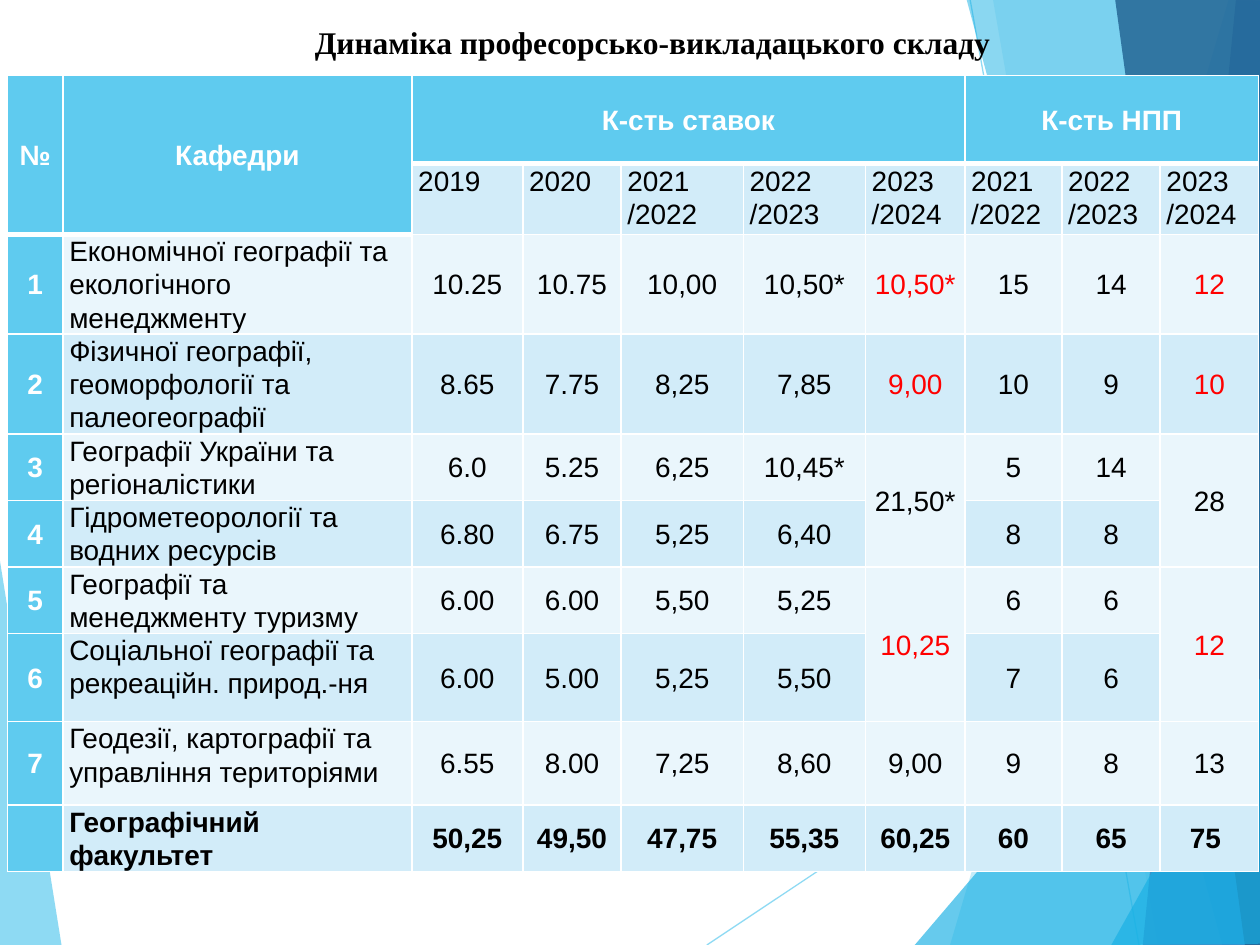
from lxml import etree
from pptx import Presentation
from pptx.dml.color import RGBColor
from pptx.enum import shapes, text
from pptx.oxml import ns
from pptx.util import Inches, Pt

COLORS = {
    "white": "FFFFFF", "black": "000000", "red": "FF0000", "sky": "5FCBEF",
    "azure": "17B0E4", "blue": "2E83C3", "navy": "226292",
    "odd": "EAF6FC", "even": "D2ECF9",
}

TITLE = "Динаміка професорсько-викладацького складу"
HEADER = ["№", "Кафедри", "К-сть ставок", "", "", "", "", "К-сть НПП", "", ""]
YEARS = ["", "", "2019", "2020", "2021\n/2022", "2022\n/2023", "2023\n/2024",
         "2021\n/2022", "2022\n/2023", "2023\n/2024"]
DEPARTMENTS = [
    ["1", "Економічної географії та екологічного менеджменту",
     "10.25", "10.75", "10,00", "10,50*", "10,50*", "15", "14", "12"],
    ["2", "Фізичної географії, геоморфології та палеогеографії",
     "8.65", "7.75", "8,25", "7,85", "9,00", "10", "9", "10"],
    ["3", "Географії України та регіоналістики",
     "6.0", "5.25", "6,25", "10,45*", "21,50*", "5", "14", "28"],
    ["4", "Гідрометеорології та водних ресурсів",
     "6.80", "6.75", "5,25", "6,40", "", "8", "8", ""],
    ["5", "Географії та менеджменту туризму",
     "6.00", "6.00", "5,50", "5,25", "10,25", "6", "6", "12"],
    ["6", "Соціальної географії та рекреаційн. природ.-ня",
     "6.00", "5.00", "5,25", "5,50", "", "7", "6", ""],
    ["7", "Геодезії, картографії та управління територіями",
     "6.55", "8.00", "7,25", "8,60", "9,00", "9", "8", "13"],
]
TOTAL = ["", "Географічний факультет",
         "50,25", "49,50", "47,75", "55,35", "60,25", "60", "65", "75 "]
ROWS = [HEADER, YEARS, *DEPARTMENTS, TOTAL]

COL_WIDTHS = [0.44, 2.77, 0.88, 0.78, 0.97, 0.97, 0.79, 0.77, 0.78, 0.78]
ROW_HEIGHTS = [0.7, 0.56, 0.7, 0.7, 0.47, 0.47, 0.47, 0.7, 0.66, 0.47]
# first row, first column, last row, last column
MERGES = [(0, 0, 1, 0), (0, 1, 1, 1), (0, 2, 0, 6), (0, 7, 0, 9),
          (4, 6, 5, 6), (4, 9, 5, 9), (6, 6, 7, 6), (6, 9, 7, 9)]
RED_CELLS = {(2, 6), (2, 9), (3, 6), (3, 9), (6, 6), (6, 9)}

LEFT_FACET = ("sky", 70, [(-0.01, 4.39), (0.49, 7.51), (-0.01, 7.5)])
RAYS = [((5.61, 7.5), (10.01, 4.57)), ((7.7, 0), (9.04, 7.5))]
RIGHT_FACETS = [
    ("sky", 36, [(9.75, 0), (7.54, 7.5), (10.02, 7.51), (10.01, 0.01)]),
    ("sky", 20, [(7.88, -0.01), (9.19, 7.5), (10.01, 7.5), (10.01, -0.01)]),
    ("azure", 66, [(7.26, 7.5), (10, 4.29), (10.01, 7.5)]),
    ("azure", 50, [(7.67, -0.01), (9.7, 7.5), (10.01, 7.49), (10.01, -0.01)]),
    ("blue", 70, [(9.81, -0.01), (9.07, 7.5), (10.01, 7.5), (10, -0.01)]),
    ("navy", 82, [(8.85, -0.01), (9.88, 7.5), (10.02, 7.5), (10, -0.01)]),
    ("azure", 66, [(8.82, 7.5), (10.02, 5.35), (10.02, 7.49)]),
]


def rgb(color):
    return RGBColor.from_string(COLORS[color])


def set_opacity(element, percent):
    for color in element.iter(ns.qn("a:srgbClr")):
        etree.SubElement(color, ns.qn("a:alpha"), val=str(percent * 1000))


def add_facet(slide, color, opacity, points):
    corners = [(Inches(x), Inches(y)) for x, y in points]
    builder = slide.shapes.build_freeform(*corners[0])
    builder.add_line_segments(corners[1:], close=True)
    facet = builder.convert_to_shape()
    facet.shadow.inherit = False
    facet.line.fill.background()
    facet.fill.solid()
    facet.fill.fore_color.rgb = rgb(color)
    set_opacity(facet._element.spPr, opacity)


def add_ray(slide, start, end):
    ray = slide.shapes.add_connector(
        shapes.MSO_CONNECTOR.STRAIGHT, *(Inches(v) for v in (*start, *end)))
    ray.line.color.rgb = rgb("sky")
    ray.line.width = Pt(0.75)
    properties = ray._element.spPr
    set_opacity(properties, 70)
    etree.SubElement(properties, ns.qn("a:effectLst"))


def write(frame, content, *, font="Arial", size=16, color="black", bold=False,
          align=text.PP_ALIGN.LEFT, spacing=None):
    frame.word_wrap = True
    frame.text = content
    for paragraph in frame.paragraphs:
        paragraph.alignment = align
        paragraph.line_spacing = spacing
        paragraph.font.size = Pt(size)
        for run in paragraph.runs:
            run.font.name = font
            run.font.size = Pt(size)
            run.font.bold = bold
            run.font.color.rgb = rgb(color)


def set_borders(cell, widths):
    """Draw white borders; widths are points for left, right, top, bottom."""
    properties = cell._tc.get_or_add_tcPr()
    for index, (side, width) in enumerate(zip("LRTB", widths)):
        border = etree.Element(ns.qn(f"a:ln{side}"), w=str(Pt(width)))
        fill = etree.SubElement(border, ns.qn("a:solidFill"))
        etree.SubElement(fill, ns.qn("a:srgbClr"), val=COLORS["white"])
        properties.insert(index, border)


def format_cell(cell, row, col, content):
    header_rows = 2 if col < 2 else 1
    is_header = row < header_rows
    is_accent = is_header or col == 0
    is_total = row == len(ROWS) - 1
    at_top_left = not is_header and (row == 1 or col == 1)

    cell.margin_left = cell.margin_right = Inches(0.05)
    cell.margin_top = cell.margin_bottom = 0
    cell.vertical_anchor = (text.MSO_ANCHOR.TOP if at_top_left
                            else text.MSO_ANCHOR.MIDDLE)
    cell.fill.solid()
    cell.fill.fore_color.rgb = rgb(
        "sky" if is_accent else "even" if row % 2 else "odd")
    if is_total and not is_accent:
        cell.fill.fore_color.rgb = rgb("even")
    set_borders(cell, (1, 1, 3 if row == header_rows else 1,
                       3 if is_header else 1))
    write(cell.text_frame, content,
          color=("white" if is_accent
                 else "red" if (row, col) in RED_CELLS else "black"),
          bold=is_accent or is_total, spacing=1.07,
          align=text.PP_ALIGN.LEFT if at_top_left else text.PP_ALIGN.CENTER)


def add_staff_table(slide):
    staff = slide.shapes.add_table(
        len(ROWS), len(COL_WIDTHS), Inches(0.06), Inches(0.6),
        Inches(sum(COL_WIDTHS)), Inches(sum(ROW_HEIGHTS))).table
    for column, width in zip(staff.columns, COL_WIDTHS):
        column.width = Inches(width)
    for row, height in zip(staff.rows, ROW_HEIGHTS):
        row.height = Inches(height)
    for row, contents in enumerate(ROWS):
        for col, content in enumerate(contents):
            format_cell(staff.cell(row, col), row, col, content)
    for top, left, bottom, right in MERGES:
        staff.cell(top, left).merge(staff.cell(bottom, right))


def main():
    deck = Presentation()
    deck.slide_width, deck.slide_height = Inches(10), Inches(7.5)
    slide = deck.slides.add_slide(deck.slide_layouts[6])

    add_facet(slide, *LEFT_FACET)
    for start, end in RAYS:
        add_ray(slide, start, end)
    for facet in RIGHT_FACETS:
        add_facet(slide, *facet)

    add_staff_table(slide)
    title = slide.shapes.add_textbox(
        Inches(2.4), Inches(0.13), Inches(7.17), Inches(0.4))
    write(title.text_frame, TITLE, font="Times New Roman", size=18, bold=True)
    deck.save("out.pptx")


if __name__ == "__main__":
    main()
